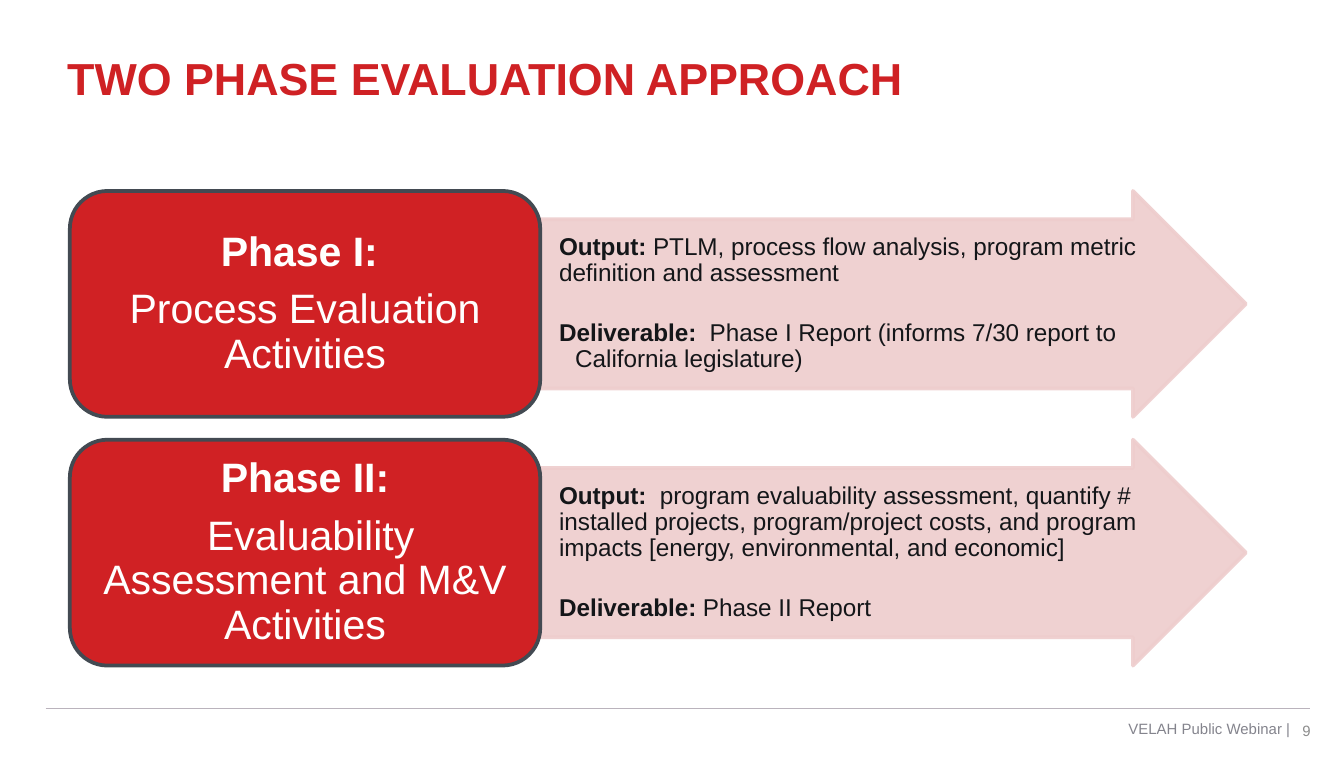
from dataclasses import dataclass

from lxml import etree
from pptx import Presentation
from pptx.dml.color import RGBColor
from pptx.enum.shapes import MSO_CONNECTOR, MSO_SHAPE
from pptx.enum.text import MSO_ANCHOR, PP_ALIGN
from pptx.oxml.ns import qn
from pptx.util import Inches, Pt

ROUNDED = MSO_SHAPE.ROUNDED_RECTANGLE
ARROW = MSO_SHAPE.RIGHT_ARROW
STRAIGHT = MSO_CONNECTOR.STRAIGHT
MIDDLE = MSO_ANCHOR.MIDDLE
LEFT, CENTER, RIGHT = PP_ALIGN.LEFT, PP_ALIGN.CENTER, PP_ALIGN.RIGHT
TITLE_ONLY = 5


@dataclass(frozen=True)
class Theme:
    font: str = "Arial"
    title_red: str = "CF2124"
    card_red: str = "D02124"
    card_border: str = "434A52"
    card_text: str = "FFFFFE"
    arrow_pink: str = "EECDCD"
    body_text: str = "141619"
    footer_text: str = "84848D"
    number_text: str = "8C8C8C"
    rule: str = "BAB3BC"
    title_size: int = 24
    card_size: int = 22
    body_size: int = 13
    footer_size: int = 8


class PhaseSlide:
    def __init__(self, page, theme):
        self.page = page
        self.theme = theme

    def format_span(self, span, size, color, bold=False):
        span.font.name = self.theme.font
        span.font.size = Pt(size)
        span.font.bold = bold
        span.font.color.rgb = RGBColor.from_string(color)

    def title(self, text):
        box = self.page.shapes.title
        box.left, box.top = Inches(0.4), Inches(0.32)
        box.width, box.height = Inches(9), Inches(0.51)
        box.text_frame.text = text
        box.text_frame.vertical_anchor = MIDDLE
        para = box.text_frame.paragraphs[0]
        para.alignment = LEFT
        self.format_span(para.runs[0], self.theme.title_size, self.theme.title_red, True)

    def label(self, text, left, top, width, color):
        box = self.page.shapes.add_textbox(
            Inches(left), Inches(top), Inches(width), Inches(0.3))
        frame = box.text_frame
        frame.word_wrap = True
        frame.vertical_anchor = MIDDLE
        frame.text = text
        para = frame.paragraphs[0]
        para.alignment = RIGHT
        self.format_span(para.runs[0], self.theme.footer_size, color)

    def rule(self, left, right, top):
        line = self.page.shapes.add_connector(
            STRAIGHT, Inches(left), Inches(top), Inches(right), Inches(top))
        line.line.color.rgb = RGBColor.from_string(self.theme.rule)
        line.line.width = Pt(0.5)
        etree.SubElement(line._element.spPr, qn("a:effectLst"))

    def block(self, kind, left, top, width, height, fill, border):
        shape = self.page.shapes.add_shape(
            kind, Inches(left), Inches(top), Inches(width), Inches(height))
        shape.shadow.inherit = False
        shape.fill.solid()
        shape.fill.fore_color.rgb = RGBColor.from_string(fill)
        shape.line.color.rgb = RGBColor.from_string(border)
        shape.line.width = Pt(2)
        etree.SubElement(shape._element.spPr.find(qn("a:ln")), qn("a:round"))
        shape.text_frame.word_wrap = True
        shape.text_frame.vertical_anchor = MIDDLE
        return shape

    def card(self, lines, left, top, width, height):
        theme = self.theme
        shape = self.block(ROUNDED, left, top, width, height,
                           theme.card_red, theme.card_border)
        frame = shape.text_frame
        frame.text = "\n".join(lines)
        for index, para in enumerate(frame.paragraphs):
            para.alignment = CENTER
            para.line_spacing = 0.9
            para.space_after = Pt(7)
            self.format_span(para.runs[0], theme.card_size, theme.card_text, index == 0)

    def arrow(self, entries, left, top, width, height):
        theme = self.theme
        shape = self.block(ARROW, left, top, width, height,
                           theme.arrow_pink, theme.arrow_pink)
        shape.adjustments[0], shape.adjustments[1] = 0.75, 0.5
        for color in list(shape._element.spPr.iter(qn("a:srgbClr"))):
            etree.SubElement(color, qn("a:alpha"), val="90000")
        frame = shape.text_frame
        frame.margin_left = frame.margin_right = Inches(0.01)
        frame.margin_top = frame.margin_bottom = Inches(0.01)
        for index, (heading, text) in enumerate(entries):
            para = frame.add_paragraph() if index else frame.paragraphs[0]
            para.alignment = LEFT
            para.line_spacing = 0.9
            para.space_before = Pt(18 if index else 0)
            properties = para._p.get_or_add_pPr()
            properties.set("marL", str(Inches(0.25 if index else 0.13)))
            properties.set("indent", str(Inches(-0.12 if index else 0)))
            for words, bold in ((heading, True), (text, False)):
                span = para.add_run()
                span.text = words
                self.format_span(span, theme.body_size, theme.body_text, bold)


PHASES = [
    (["Phase I: ", "Process Evaluation Activities"],
     [("Output: ", "PTLM, process flow analysis, program metric definition and assessment"),
      ("Deliverable:  ",
       "Phase I Report (informs 7/30 report to California legislature)")]),
    (["Phase II:", " Evaluability Assessment and M&V Activities"],
     [("Output:  ",
       "program evaluability assessment, quantify # installed projects, "
       "program/project costs, and program impacts "
       "[energy, environmental, and economic]"),
      ("Deliverable: ", "Phase II Report")]),
]


def main():
    deck = Presentation()
    deck.slide_width, deck.slide_height = Inches(10), Inches(5.63)
    theme = Theme()
    slide = PhaseSlide(deck.slides.add_slide(deck.slide_layouts[TITLE_ONLY]), theme)

    slide.rule(0.34, 9.75, 5.27)
    slide.label("9", 9.42, 5.28, 0.43, theme.number_text)
    slide.title("TWO PHASE EVALUATION APPROACH")
    slide.label("VELAH Public Webinar |", 6.32, 5.27, 3.38, theme.footer_text)

    card_left, card_width, arrow_width = 0.52, 3.5, 5.25
    first_top, height, pitch = 1.42, 1.68, 1.85
    for index, (lines, entries) in enumerate(PHASES):
        top = first_top + index * pitch
        slide.arrow(entries, card_left + card_width, top, arrow_width, height)
        slide.card(lines, card_left, top, card_width, height)

    deck.save("out.pptx")


if __name__ == "__main__":
    main()
